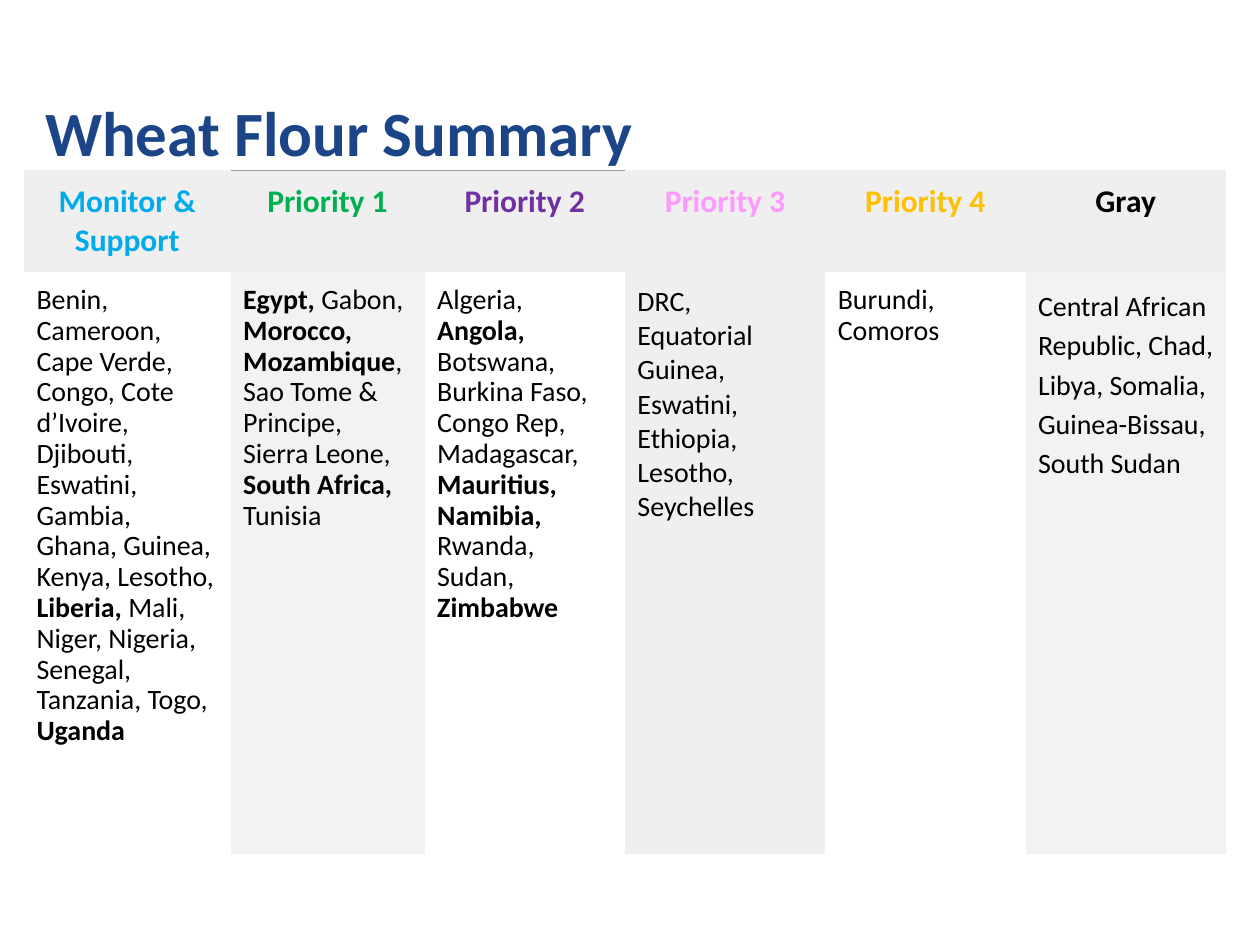
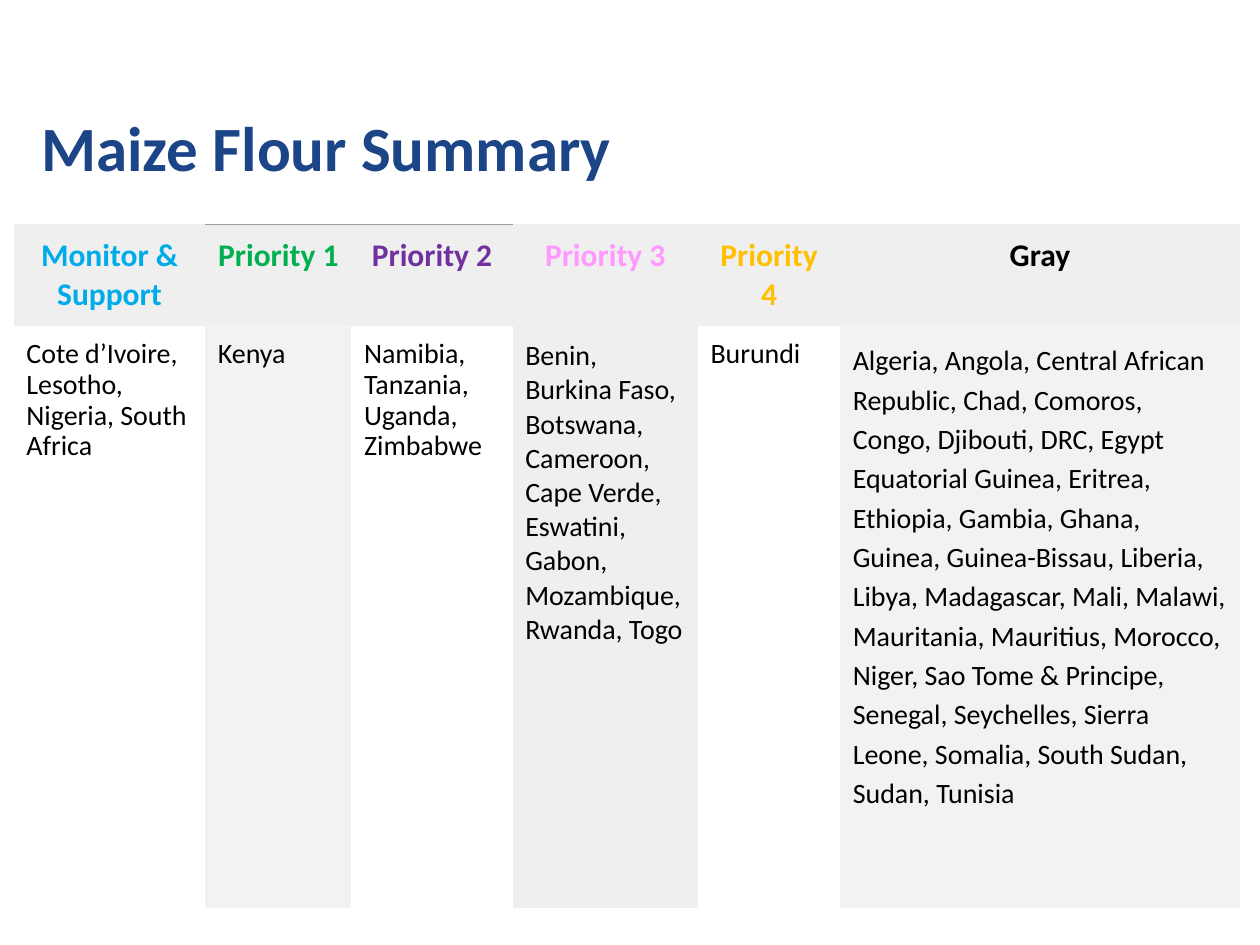
import pptx
import pptx.dml.color
import pptx.enum.text
import pptx.util
from lxml import etree
from pptx.oxml.ns import qn

Inches = pptx.util.Inches
Pt = pptx.util.Pt
RGBColor = pptx.dml.color.RGBColor
PP_ALIGN = pptx.enum.text.PP_ALIGN
MSO_ANCHOR = pptx.enum.text.MSO_ANCHOR

NAVY = RGBColor(0x1C, 0x45, 0x87)
CYAN = RGBColor(0x00, 0xAB, 0xEA)
GREEN = RGBColor(0x00, 0xB0, 0x50)
PURPLE = RGBColor(0x70, 0x30, 0xA0)
PINK = RGBColor(0xFF, 0x99, 0xFF)
AMBER = RGBColor(0xFF, 0xC0, 0x00)
BLACK = RGBColor(0x00, 0x00, 0x00)
HEADER_GRAY = RGBColor(0xEF, 0xEF, 0xEF)
COLUMN_GRAY = RGBColor(0xF2, 0xF2, 0xF2)
RULE_GRAY = RGBColor(0x9E, 0x9E, 0x9E)

FONT = "Calibri"
CELL_MARGIN = Inches(0.1)
HEADER_HEIGHT = Inches(0.81)
COUNTRIES_HEIGHT = Inches(4.62)

# heading, heading colour, rule above heading, column fill, line spacing
PRIORITIES = [
    ("Monitor & Support", CYAN, False, None, 0.9),
    ("Priority 1", GREEN, True, COLUMN_GRAY, 0.9),
    ("Priority 2", PURPLE, True, None, 0.9),
    ("Priority 3", PINK, False, HEADER_GRAY, None),
    ("Priority 4", AMBER, False, None, 0.9),
    ("Gray", BLACK, False, COLUMN_GRAY, 1.15),
]

WHEAT_COUNTRIES = [
    "Benin, Cameroon, Cape Verde, Congo, Cote d’Ivoire, Djibouti, Eswatini, "
    "Gambia, Ghana, Guinea, Kenya, Lesotho, *Liberia, *Mali, Niger, Nigeria, "
    "Senegal, Tanzania, Togo, *Uganda",
    "*Egypt, *Gabon, *Morocco, Mozambique*, Sao Tome & Principe, "
    "Sierra Leone, *South Africa, *Tunisia",
    "Algeria, *Angola, *Botswana, Burkina Faso, Congo Rep, Madagascar, "
    "*Mauritius, Namibia, *Rwanda, Sudan, *Zimbabwe",
    "DRC, Equatorial Guinea, Eswatini, Ethiopia, Lesotho, Seychelles",
    "Burundi, Comoros",
    "Central African Republic, Chad, Libya, Somalia,\nGuinea-Bissau,\nSouth Sudan",
]

MAIZE_COUNTRIES = [
    "Cote d’Ivoire, Lesotho, Nigeria, South Africa",
    "Kenya",
    "Namibia, Tanzania, Uganda, Zimbabwe",
    "Benin, Burkina Faso, Botswana, Cameroon, Cape Verde, Eswatini, Gabon, "
    "Mozambique, Rwanda, Togo",
    "Burundi",
    "Algeria, Angola, Central African Republic, Chad, Comoros, Congo, Djibouti, "
    "DRC, Egypt Equatorial Guinea, Eritrea, Ethiopia, Gambia, Ghana, Guinea, "
    "Guinea-Bissau, Liberia, Libya, Madagascar, Mali, Malawi, Mauritania, "
    "Mauritius, Morocco, Niger, Sao Tome & Principe, Senegal, Seychelles, "
    "Sierra Leone, Somalia, South Sudan, Sudan, Tunisia",
]


def style_font(font, size, color, bold):
    font.name = FONT
    font.size = Pt(size)
    font.color.rgb = color
    font.bold = bold


def add_title(slide, text, left, top, width, height):
    title = slide.shapes.add_textbox(left, top, width, height)
    frame = title.text_frame
    frame.word_wrap = True
    frame.vertical_anchor = MSO_ANCHOR.MIDDLE
    frame.text = text
    frame.paragraphs[0].line_spacing = 0.9
    style_font(frame.paragraphs[0].runs[0].font, 36, NAVY, True)


def prepare_cell(cell, fill, ruled=False):
    cell.margin_left = cell.margin_right = CELL_MARGIN
    cell.margin_top = cell.margin_bottom = CELL_MARGIN
    properties = cell._tc.get_or_add_tcPr()
    for side in ("lnL", "lnR", "lnT", "lnB"):
        border = etree.SubElement(properties, qn(f"a:{side}"))
        if ruled and side == "lnT":
            border.set("w", str(Pt(0.75)))
            solid = etree.SubElement(border, qn("a:solidFill"))
            etree.SubElement(solid, qn("a:srgbClr")).set("val", str(RULE_GRAY))
        else:
            etree.SubElement(border, qn("a:noFill"))
    if fill is None:
        cell.fill.background()
    else:
        cell.fill.solid()
        cell.fill.fore_color.rgb = fill


def fill_heading(cell, heading, color, ruled):
    prepare_cell(cell, HEADER_GRAY, ruled)
    cell.text_frame.text = heading
    paragraph = cell.text_frame.paragraphs[0]
    paragraph.alignment = PP_ALIGN.CENTER
    style_font(paragraph.runs[0].font, 18, color, True)


def fill_countries(cell, countries, fill, line_spacing):
    prepare_cell(cell, fill)
    cell.text_frame.text = countries.replace("*", "")
    for paragraph, line in zip(cell.text_frame.paragraphs, countries.split("\n")):
        paragraph.line_spacing = line_spacing
        paragraph.text = ""
        for index, names in enumerate(line.split("*")):
            if names:
                run = paragraph.add_run()
                run.text = names
                style_font(run.font, 16, BLACK, index % 2 == 1)


def add_priority_table(slide, left, top, widths, countries):
    frame = slide.shapes.add_table(
        2, len(widths), left, top,
        Inches(sum(widths)), HEADER_HEIGHT + COUNTRIES_HEIGHT)
    table = frame.table
    table.first_row = False
    table.horz_banding = False
    table.rows[0].height = HEADER_HEIGHT
    table.rows[1].height = COUNTRIES_HEIGHT
    for column, (priority, width, names) in enumerate(zip(PRIORITIES, widths, countries)):
        heading, color, ruled, fill, line_spacing = priority
        table.columns[column].width = Inches(width)
        fill_heading(table.cell(0, column), heading, color, ruled)
        fill_countries(table.cell(1, column), names, fill, line_spacing)


def add_summary_slide(deck, title, title_box, table_corner, widths, countries):
    slide = deck.slides.add_slide(deck.slide_layouts[6])
    add_title(slide, title, *map(Inches, title_box))
    add_priority_table(slide, *map(Inches, table_corner), widths, countries)


def main():
    deck = pptx.Presentation()
    deck.slide_width = Inches(10)
    deck.slide_height = Inches(7.5)
    add_summary_slide(
        deck, "Wheat Flour Summary", (0.26, 0.56, 6.13, 1.04), (0.19, 1.35),
        [1.64, 1.54] + [1.59] * 4, WHEAT_COUNTRIES)
    add_summary_slide(
        deck, "Maize Flour Summary", (0.23, 0.68, 5.76, 1.04), (0.11, 1.78),
        [1.52, 1.16, 1.28, 1.47, 1.13, 3.17], MAIZE_COUNTRIES)
    deck.save("out.pptx")


if __name__ == "__main__":
    main()
